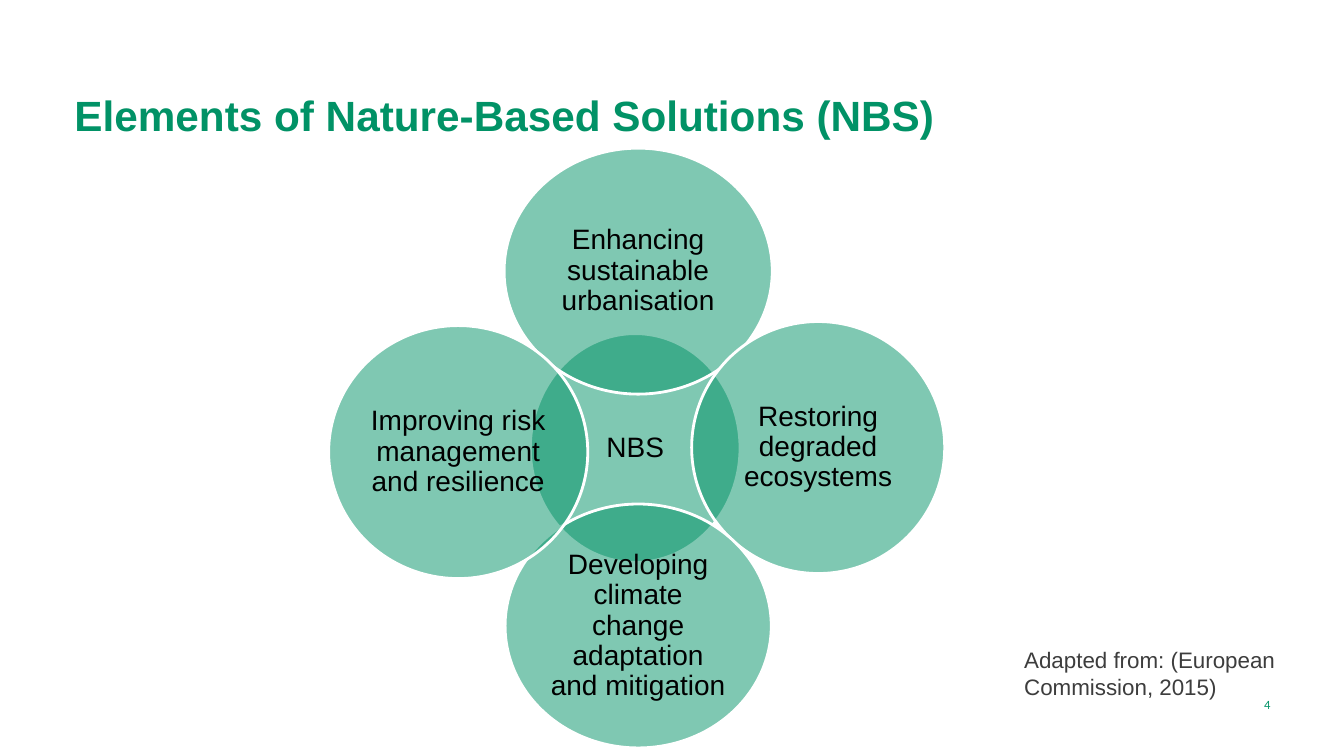
from lxml import etree
from pptx import Presentation
from pptx.dml.color import RGBColor
from pptx.enum.shapes import MSO_SHAPE
from pptx.enum.text import MSO_ANCHOR, PP_ALIGN
from pptx.oxml.ns import qn
from pptx.util import Inches, Pt

OVAL = MSO_SHAPE.OVAL
TOP, MIDDLE, BOTTOM = MSO_ANCHOR.TOP, MSO_ANCHOR.MIDDLE, MSO_ANCHOR.BOTTOM
LEFT, CENTER, RIGHT = PP_ALIGN.LEFT, PP_ALIGN.CENTER, PP_ALIGN.RIGHT

COLORS = {"green": "019266", "white": "FFFFFF", "black": "000000", "grey": "3D3D3D"}

ELEMENTS = [
    ("NBS", (2.0, 1.84, 2.08, 2.27)),
    ("Enhancing sustainable urbanisation", (1.74, 0, 2.66, 2.44)),
    ("Restoring degraded ecosystems", (3.6, 1.72, 2.51, 2.5)),
    ("Developing climate change adaptation and mitigation", (1.75, 3.53, 2.64, 2.42)),
    ("Improving risk management and resilience", (0, 1.76, 2.57, 2.51)),
]


def rgb(name):
    """Return the named palette colour."""
    return RGBColor.from_string(COLORS[name])


def write(frame, text, size, color, align=LEFT, anchor=TOP, font="Arial", bold=False):
    """Write one wrapped paragraph into a text frame and return it."""
    frame.word_wrap = True
    frame.vertical_anchor = anchor
    paragraph = frame.paragraphs[0]
    paragraph.alignment = align
    run = paragraph.add_run()
    run.text = text
    run.font.name = font
    run.font.size = Pt(size)
    run.font.bold = bold
    run.font.color.rgb = rgb(color)
    return paragraph


def add_label(slide, box, text, size, color, **style):
    """Place a text box with one styled paragraph."""
    label = slide.shapes.add_textbox(*map(Inches, box))
    write(label.text_frame, text, size, color, **style)


def add_circle(slide, box, text):
    """Place one translucent circle with its centred caption."""
    circle = slide.shapes.add_shape(OVAL, *map(Inches, box))
    circle.shadow.inherit = False
    circle.fill.solid()
    circle.fill.fore_color.rgb = rgb("green")
    tint = circle.fill._xPr.find(qn("a:solidFill"))[0]
    etree.SubElement(tint, qn("a:alpha")).set("val", "50000")
    circle.line.color.rgb = rgb("white")
    circle.line.width = Pt(2)
    frame = circle.text_frame
    frame.margin_left = frame.margin_right = Inches(0.03)
    frame.margin_top = frame.margin_bottom = Inches(0.03)
    caption = write(frame, text, 20, "black", align=CENTER, anchor=MIDDLE)
    caption.line_spacing = 0.9


def add_venn(slide, left, top):
    """Place the overlapping circles relative to the diagram's corner."""
    for text, (x, y, width, height) in ELEMENTS:
        add_circle(slide, (left + x, top + y, width, height), text)


def build_elements_slide(prs):
    """Build the slide on the elements of nature-based solutions."""
    slide = prs.slides.add_slide(prs.slide_layouts[6])
    add_label(slide, (0.64, 0.62, 12.06, 0.82), "Elements of Nature-Based Solutions (NBS)",
              30.2, "green", anchor=BOTTOM, bold=True)
    add_label(slide, (11.55, 6.79, 1.15, 0.4), "4", 9, "green",
              align=RIGHT, anchor=MIDDLE, font="Calibri")
    add_venn(slide, 3.26, 1.47)
    add_label(slide, (10.06, 6.36, 3, 0.64), "Adapted from: (European Commission, 2015)",
              16, "grey")


def main():
    """Create and save the presentation."""
    prs = Presentation()
    prs.slide_width = Inches(13.33)
    prs.slide_height = Inches(7.5)
    build_elements_slide(prs)
    prs.save("out.pptx")


if __name__ == "__main__":
    main()
